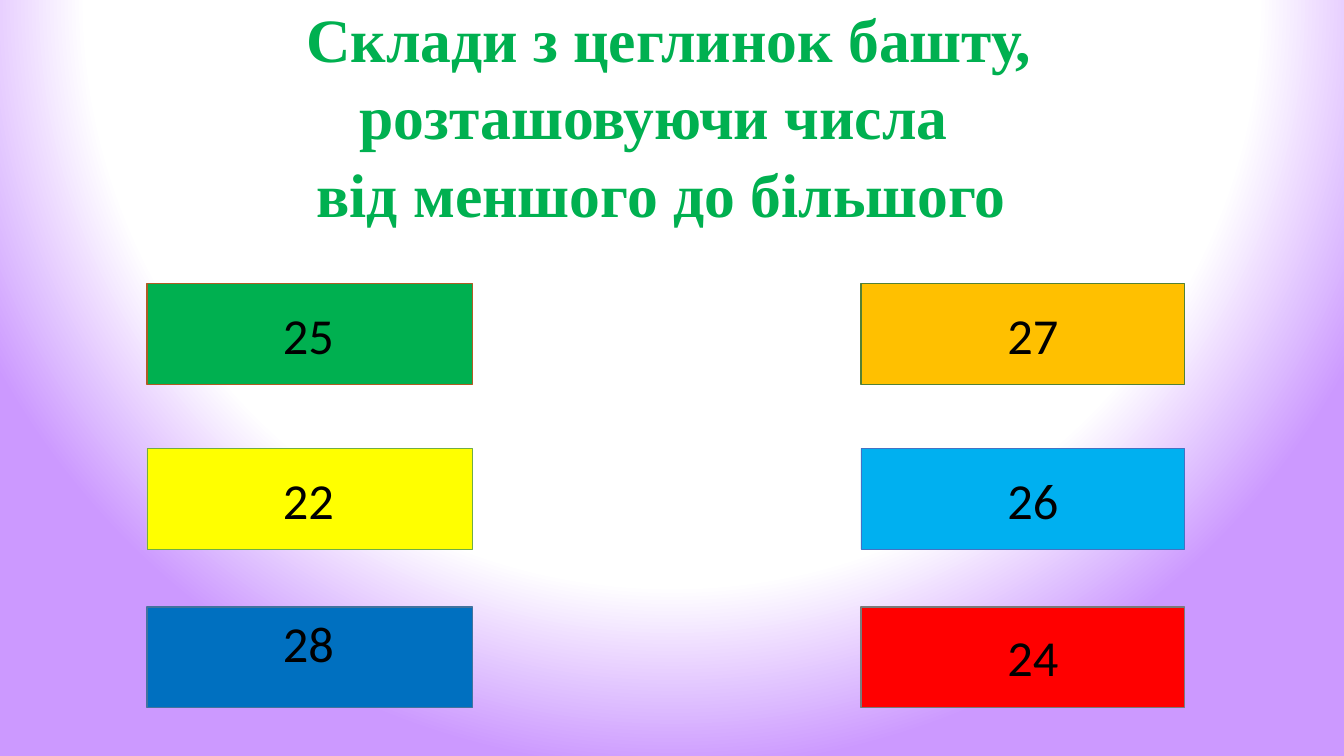
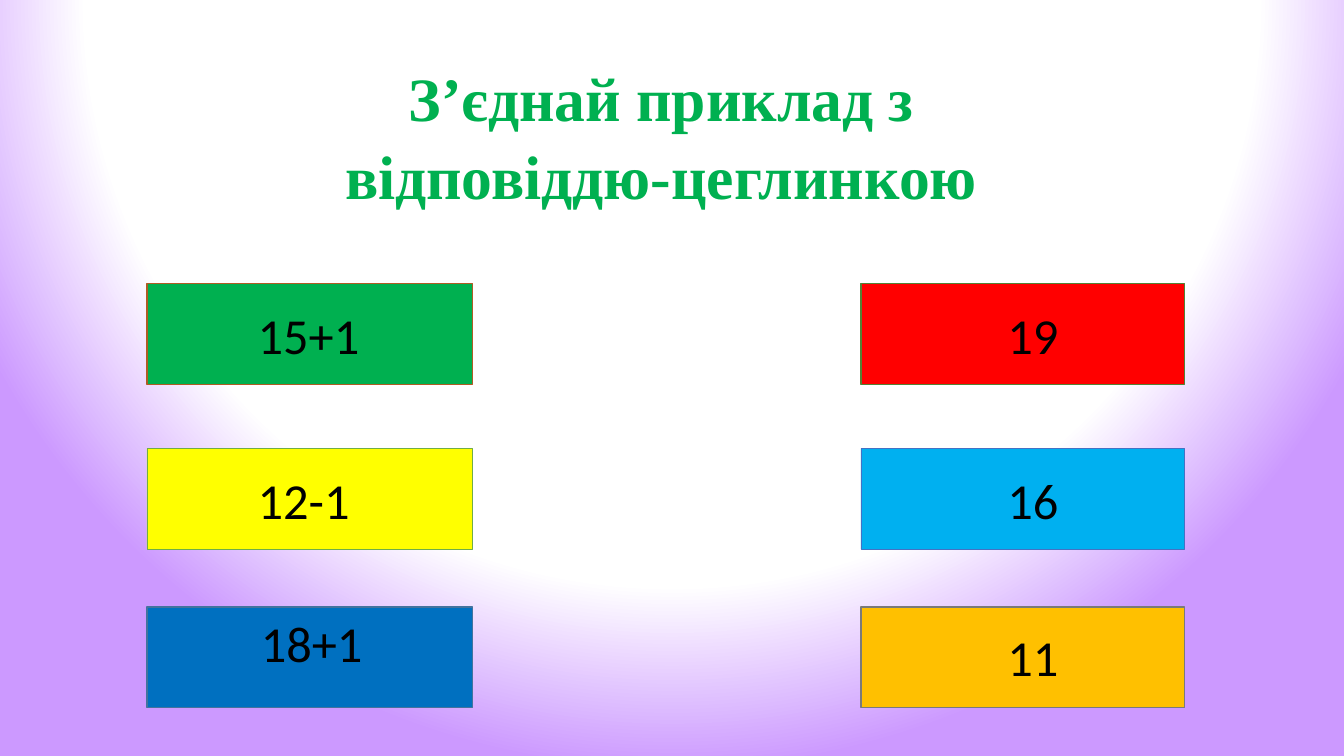
"""Two number-brick slides for a class on counting and sums."""
from lxml import etree
from pptx import Presentation
from pptx.dml.color import RGBColor
from pptx.enum import shapes, text
from pptx.oxml import parse_xml
from pptx.oxml.ns import nsdecls, qn
from pptx.util import Emu, Pt

PX = 9525
BLACK = RGBColor(0x00, 0x00, 0x00)
GREEN = RGBColor(0x00, 0xB0, 0x50)
YELLOW = RGBColor(0xFF, 0xFF, 0x00)
BLUE = RGBColor(0x00, 0x70, 0xC0)
AMBER = RGBColor(0xFF, 0xC0, 0x00)
SKY = RGBColor(0x00, 0xB0, 0xF0)
RED = RGBColor(0xFF, 0x00, 0x00)
WHITE = RGBColor(0xFF, 0xFF, 0xFF)
LILAC = RGBColor(0xCC, 0x99, 0xFF)
RUST = RGBColor(0xAF, 0x5C, 0x24)
LEAF = RGBColor(0x70, 0xAD, 0x47)
STEEL = RGBColor(0x43, 0x73, 0x9E)
MOSS = RGBColor(0x53, 0x81, 0x35)
DENIM = RGBColor(0x44, 0x72, 0xC4)
GREY = RGBColor(0x7A, 0x7A, 0x7A)

SERIF, SANS = "Times New Roman", "Calibri"
ROWS = (270, 427, 578)
LEFT, RIGHT = (140, 310), (820, 308)
EDGES = ((RUST, 1), (LEAF, 0.5), (STEEL, 1)), ((MOSS, 1), (DENIM, 0.5), (GREY, 1))
DROPS = (15, 15, 0), (15, 15, 14)
BRICK, LABEL = 96, 68
FLOOR = 202


def box(*sizes):
    """Turn px lengths into EMU."""
    return [Emu(size * PX) for size in sizes]


def glow(master):
    """Give all slides a white round glow that fades to lilac."""
    fill = master.background.fill
    fill.solid()
    stops = "".join(
        f'<a:gs pos="{pos}"><a:srgbClr val="{tint}"/></a:gs>'
        for pos, tint in ((0, WHITE), (76000, WHITE), (100000, LILAC)))
    grad = parse_xml(
        f'<a:gradFill {nsdecls("a")} rotWithShape="1"><a:gsLst>{stops}</a:gsLst>'
        '<a:path path="circle"><a:fillToRect l="50000" t="-80000" r="50000" b="180000"/>'
        '</a:path></a:gradFill>')
    plain = master.element.find(f'.//{qn("p:bgPr")}/{qn("a:solidFill")}')
    plain.getparent().replace(plain, grad)


def write(slide, words, place, font=SANS, size=36, tint=BLACK, bold=False,
          align=text.PP_ALIGN.LEFT, anchor=text.MSO_ANCHOR.TOP, space=1.0):
    """Add a text box, with one paragraph for each item of words."""
    frame = slide.shapes.add_textbox(*box(*place)).text_frame
    frame.word_wrap = True
    frame.vertical_anchor = anchor
    for i, line in enumerate(words):
        para = frame.add_paragraph() if i else frame.paragraphs[0]
        para.text = line
        para.alignment = align
        para.line_spacing = space
        for run in para.runs:
            run.font.name, run.font.size = font, Pt(size)
            run.font.bold, run.font.color.rgb = bold, tint


def title(slide, words, top):
    """Write the green heading, which ends at a fixed floor."""
    write(slide, words, (116, top, 1028, FLOOR - top), font=SERIF, size=44,
          tint=GREEN, bold=True, align=text.PP_ALIGN.CENTER,
          anchor=text.MSO_ANCHOR.MIDDLE, space=1.05)


def brick(slide, place, fill, edge):
    """Add one coloured brick with a thin edge."""
    shape = slide.shapes.add_shape(shapes.MSO_SHAPE.RECTANGLE, *box(*place))
    shape.shadow.inherit = False
    shape.fill.solid()
    shape.fill.fore_color.rgb = fill
    shape.line.color.rgb, shape.line.width = edge[0], Pt(edge[1])


def stack(slide, side, items):
    """Add a column of bricks from (text, text left, fill) items."""
    x, width = (LEFT, RIGHT)[side]
    for item, y, edge, drop in zip(items, ROWS, EDGES[side], DROPS[side]):
        words, start, fill = item
        brick(slide, (x, y, width, BRICK), fill, edge)
        write(slide, [words], (start, y + drop, 146, LABEL))


def main():
    """Build both slides and save the deck."""
    deck = Presentation()
    deck.slide_width, deck.slide_height = box(1280, 720)
    glow(deck.slide_master)
    pages = (
        ((" Склади з цеглинок башту,\vрозташовуючи числа ", "від меншого до більшого"), 14,
         (("25", 260, GREEN), ("22", 260, YELLOW), ("28", 260, BLUE)),
         (("27", 950, AMBER), ("26", 950, SKY), ("24", 950, RED))),
        ((" З’єднай приклад з ", "відповіддю-цеглинкою"), 53,
         (("15+1", 236, GREEN), ("12-1", 236, YELLOW), ("18+1", 239, BLUE)),
         (("19", 950, RED), ("16", 950, SKY), ("11", 950, AMBER))),
    )
    for words, top, *sides in pages:
        slide = deck.slides.add_slide(deck.slide_layouts[6])
        title(slide, words, top)
        for side, items in enumerate(sides):
            stack(slide, side, items)
    deck.save("out.pptx")


if __name__ == "__main__":
    main()
